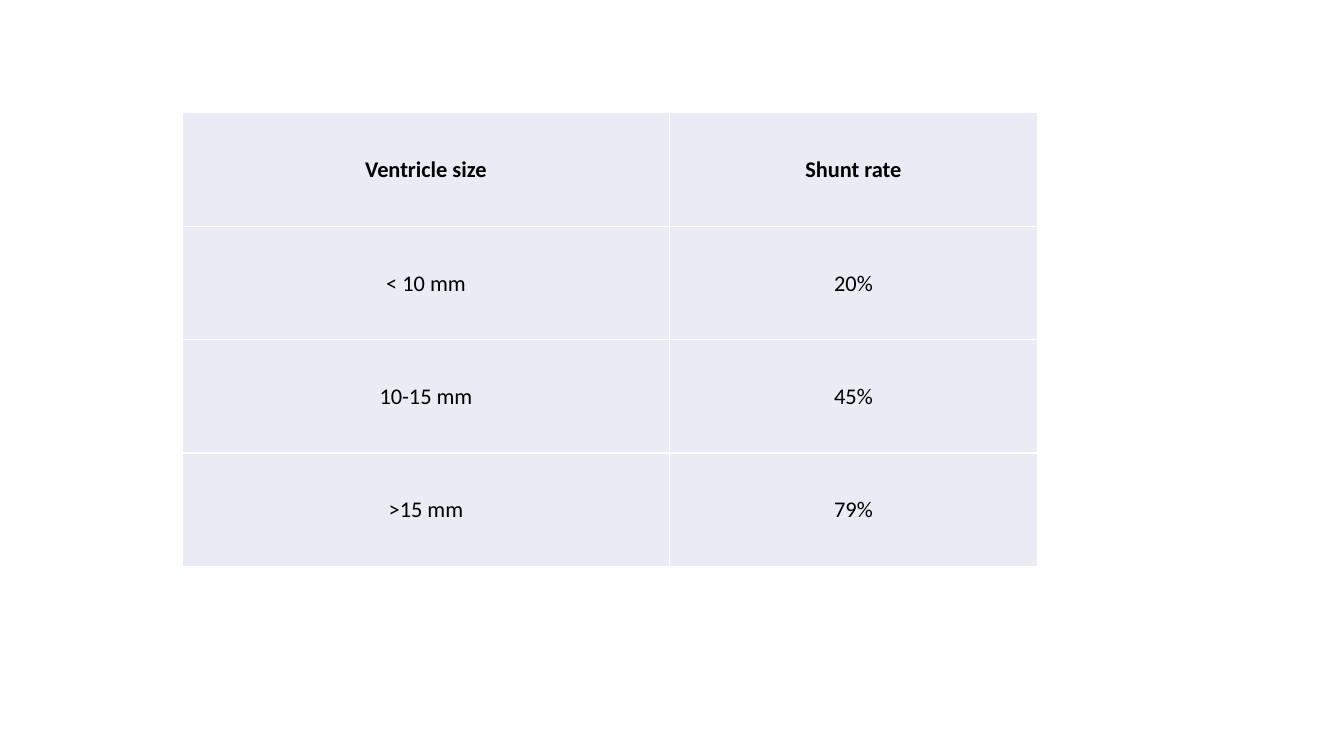
from dataclasses import dataclass

from lxml import etree
from pptx import Presentation
from pptx.dml.color import RGBColor
from pptx.enum import text
from pptx.oxml import ns
from pptx.table import _Cell
from pptx.util import Inches, Pt

BLACK = RGBColor(0x00, 0x00, 0x00)
WHITE = RGBColor(0xFF, 0xFF, 0xFF)
PALE_BLUE = RGBColor(0xE9, 0xEB, 0xF5)
FONT = "Calibri"
COL_WIDTHS = (4.83, 3.65)
ROW_HEIGHT = 1.125


@dataclass(frozen=True)
class ShuntRow:
    ventricle_size: str
    shunt_rate: str
    bold: bool = False


ROWS = (
    ShuntRow("Ventricle size", "Shunt rate", bold=True),
    ShuntRow("< 10 mm", "20%"),
    ShuntRow("10-15 mm", "45%"),
    ShuntRow(">15 mm", "79%"),
)


def add_borders(cell: _Cell, color: RGBColor, width: float) -> None:
    tc_pr = cell._tc.get_or_add_tcPr()
    for side in ("L", "R", "T", "B"):
        line = etree.SubElement(tc_pr, ns.qn(f"a:ln{side}"), w=str(Pt(width)))
        fill = etree.SubElement(line, ns.qn("a:solidFill"))
        etree.SubElement(fill, ns.qn("a:srgbClr"), val=str(color))


def fill_cell(cell: _Cell, label: str, bold: bool) -> None:
    add_borders(cell, WHITE, 1)
    cell.fill.solid()
    cell.fill.fore_color.rgb = PALE_BLUE
    cell.vertical_anchor = text.MSO_ANCHOR.MIDDLE
    cell.margin_left = cell.margin_right = cell.margin_top = Inches(0.01)
    cell.margin_bottom = 0
    p = cell.text_frame.paragraphs[0]
    p.alignment = text.PP_ALIGN.CENTER
    r = p.add_run()
    r.text = label
    r.font.name = FONT
    r.font.size = Pt(16)
    r.font.bold = bold
    r.font.color.rgb = BLACK


def main() -> None:
    prs = Presentation()
    prs.slide_width, prs.slide_height = Inches(13.33), Inches(7.5)
    s = prs.slides.add_slide(prs.slide_layouts.get_by_name("Blank"))
    table = s.shapes.add_table(
        len(ROWS), len(COL_WIDTHS), Inches(1.81), Inches(1.12),
        Inches(sum(COL_WIDTHS)), Inches(ROW_HEIGHT * len(ROWS)),
    ).table
    table.horz_banding = False
    for column, width in zip(table.columns, COL_WIDTHS):
        column.width = Inches(width)
    for table_row, row in zip(table.rows, ROWS):
        table_row.height = Inches(ROW_HEIGHT)
        for cell, label in zip(table_row.cells, (row.ventricle_size, row.shunt_rate)):
            fill_cell(cell, label, row.bold)
    prs.save("out.pptx")


if __name__ == "__main__":
    main()
